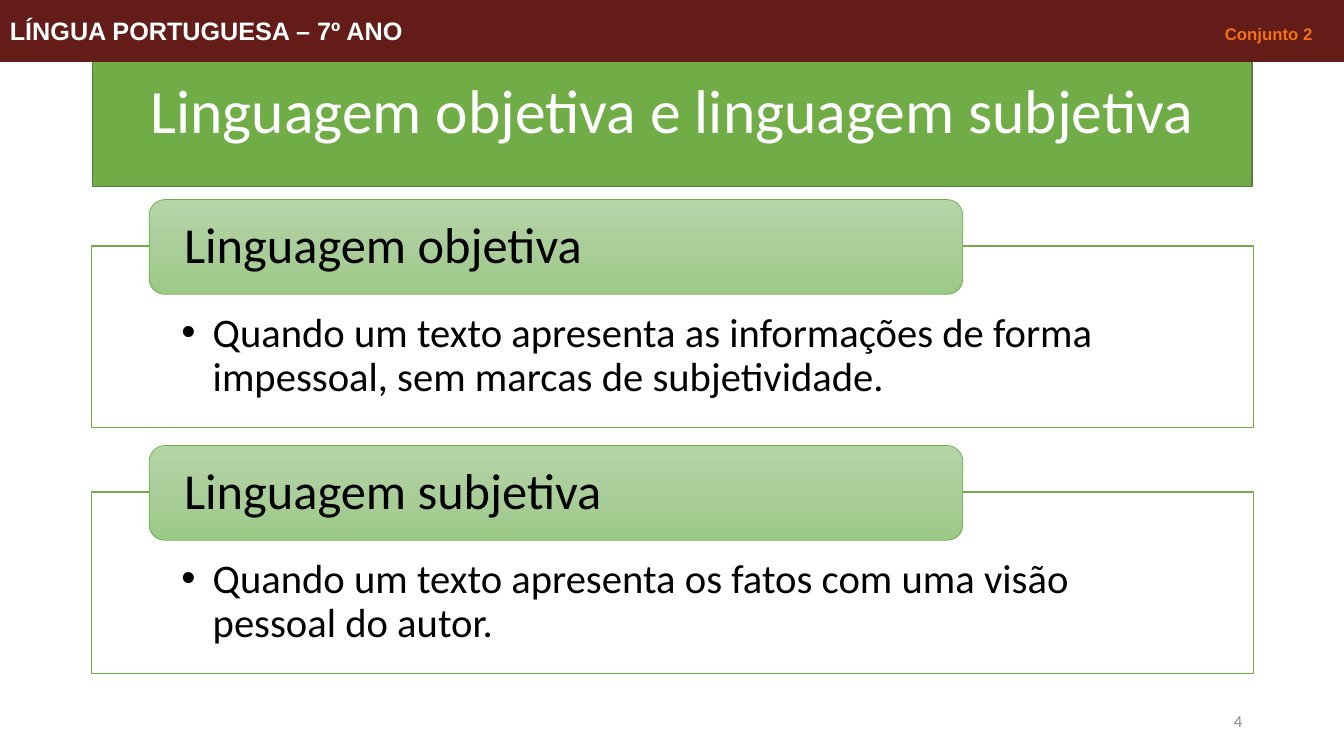
from copy import deepcopy
from dataclasses import dataclass

from lxml.etree import SubElement
from pptx import Presentation
from pptx.dml.color import RGBColor as RGB
from pptx.enum.shapes import MSO_SHAPE as SHAPE
from pptx.enum.text import MSO_ANCHOR as ANCHOR, PP_ALIGN as ALIGN
from pptx.oxml.ns import qn
from pptx.shapes.autoshape import Shape
from pptx.slide import Slide
from pptx.util import Inches, Pt


@dataclass(frozen=True)
class Theme:
    white: RGB = RGB.from_string("FFFFFF")
    black: RGB = RGB.from_string("000000")
    green: RGB = RGB.from_string("70AD47")
    dark_green: RGB = RGB.from_string("538035")
    maroon: RGB = RGB.from_string("631C18")
    orange: RGB = RGB.from_string("F47116")
    gray: RGB = RGB.from_string("8C8C8C")
    heading_stops: tuple[str, ...] = ("B5D5A7", "AACE9A", "9CC987")
    text_font: str = "Calibri"
    header_font: str = "Arial"
    title_size: float = 44
    heading_size: float = 36
    body_size: float = 29
    header_size: float = 18
    small_size: float = 12


@dataclass(frozen=True)
class Box:
    left: float
    top: float
    width: float
    height: float


@dataclass(frozen=True)
class Topic:
    heading: str
    body: str


THEME = Theme()
TOPICS = (
    Topic("Linguagem objetiva",
          "Quando um texto apresenta as informações de forma impessoal, sem marcas de subjetividade."),
    Topic("Linguagem subjetiva",
          "Quando um texto apresenta os fatos com uma visão pessoal do autor."),
)
TOPIC_TOP = 1.98
TOPIC_PITCH = 2.44


def add_box(s: Slide, kind: SHAPE, box: Box, fill: RGB, line: RGB, weight: float) -> Shape:
    sp = s.shapes.add_shape(kind, Inches(box.left), Inches(box.top), Inches(box.width), Inches(box.height))
    sp.shadow.inherit = False
    sp.fill.solid()
    sp.fill.fore_color.rgb = fill
    sp.line.color.rgb = line
    sp.line.width = Pt(weight)
    return sp


def write(sp: Shape, text: str, size: float, color: RGB, align: ALIGN = ALIGN.LEFT,
          anchor: ANCHOR = ANCHOR.MIDDLE, spacing: float = 0.9) -> None:
    tf = sp.text_frame
    tf.word_wrap = True
    tf.vertical_anchor = anchor
    p = tf.paragraphs[0]
    p.text = text
    p.alignment = align
    p.line_spacing = spacing
    p.font.name = THEME.text_font
    p.font.size = Pt(size)
    p.font.color.rgb = color


def set_insets(sp: Shape, left: float, top: float, right: float, bottom: float) -> None:
    tf = sp.text_frame
    tf.margin_left, tf.margin_top = Inches(left), Inches(top)
    tf.margin_right, tf.margin_bottom = Inches(right), Inches(bottom)


def add_bullet(sp: Shape, indent: float) -> None:
    props = sp.text_frame.paragraphs[0]._p.get_or_add_pPr()
    props.set("marL", str(Inches(indent)))
    props.set("indent", str(-Inches(indent)))
    SubElement(props, qn("a:buFont")).set("typeface", THEME.header_font)
    SubElement(props, qn("a:buChar")).set("char", "•")
    props.append(props.find(qn("a:defRPr")))


def fill_heading(sp: Shape) -> None:
    sp.fill.gradient()
    sp.fill.gradient_angle = 270
    stops = sp._element.spPr.find(qn("a:gradFill")).find(qn("a:gsLst"))
    middle = deepcopy(stops[0])
    middle.set("pos", "50000")
    stops.insert(1, middle)
    for stop, color in zip(sp.fill.gradient_stops, THEME.heading_stops):
        stop.color.rgb = RGB.from_string(color)


def add_topic(s: Slide, topic: Topic, top: float) -> None:
    body = add_box(s, SHAPE.RECTANGLE, Box(0.91, top + 0.46, 11.52, 1.8), THEME.white, THEME.green, 1)
    write(body, topic.body, THEME.body_size, THEME.black, anchor=ANCHOR.TOP)
    set_insets(body, 0.89, 0.66, 0.89, 0.23)
    add_bullet(body, 0.31)
    heading = add_box(s, SHAPE.ROUNDED_RECTANGLE, Box(1.48, top, 8.07, 0.94), THEME.white, THEME.green, 0.5)
    fill_heading(heading)
    write(heading, topic.heading, THEME.heading_size, THEME.black)
    set_insets(heading, 0.3, 0, 0.3, 0)


def add_header(s: Slide) -> None:
    sp = add_box(s, SHAPE.RECTANGLE, Box(0, 0, 13.33, 0.61), THEME.maroon, THEME.maroon, 0.75)
    write(sp, "LÍNGUA PORTUGUESA – 7º ANO\t", THEME.header_size, THEME.white, spacing=1.0)
    p = sp.text_frame.paragraphs[0]
    p.font.name = THEME.header_font
    p.font.bold = True
    r = p.add_run()
    r.text = "Conjunto 2"
    r.font.size = Pt(THEME.small_size)
    r.font.color.rgb = THEME.orange
    props = p._p.get_or_add_pPr()
    tab = SubElement(SubElement(props, qn("a:tabLst")), qn("a:tab"))
    tab.set("pos", str(Inches(12.05)))
    tab.set("algn", "l")
    props.append(props.find(qn("a:defRPr")))


def add_page_number(s: Slide) -> None:
    sp = s.shapes.add_textbox(Inches(9.42), Inches(6.95), Inches(3), Inches(0.4))
    write(sp, "4", THEME.small_size, THEME.gray, ALIGN.RIGHT, spacing=1.0)


def main() -> None:
    prs = Presentation()
    prs.slide_width, prs.slide_height = Inches(13.33), Inches(7.5)
    s = prs.slides.add_slide(prs.slide_layouts[6])
    title = add_box(s, SHAPE.RECTANGLE, Box(0.92, 0.4, 11.5, 1.45), THEME.green, THEME.dark_green, 1)
    write(title, "Linguagem objetiva e linguagem subjetiva", THEME.title_size, THEME.white, ALIGN.CENTER)
    for i, topic in enumerate(TOPICS):
        add_topic(s, topic, TOPIC_TOP + i * TOPIC_PITCH)
    add_page_number(s)
    add_header(s)
    prs.save("out.pptx")


if __name__ == "__main__":
    main()
